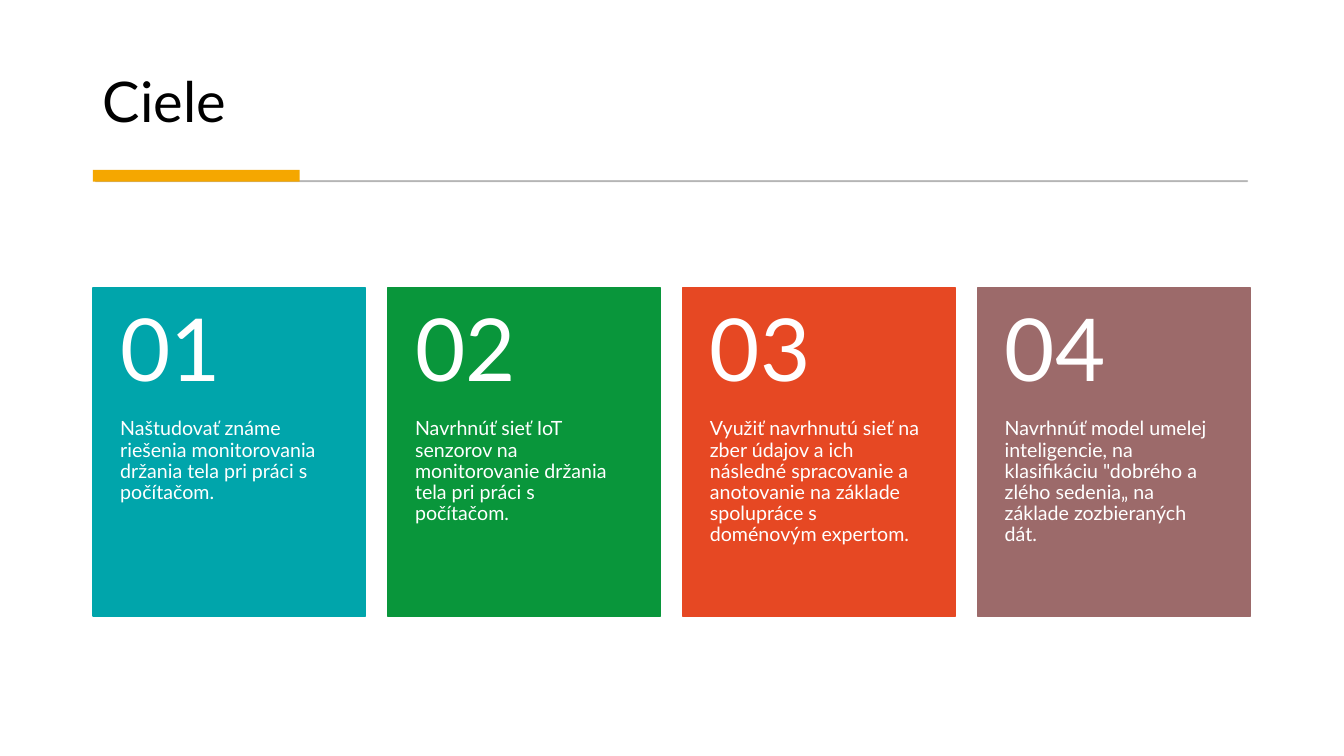
from lxml import etree
from pptx import Presentation
from pptx import util as u
from pptx.dml.color import RGBColor
from pptx.enum import shapes, text
from pptx.oxml.ns import qn

COLORS = {
    "ink": "000000",
    "white": "FFFFFF",
    "rule": "595959",
    "accent": "F5A700",
    "teal": "00A5AB",
    "green": "09963B",
    "orange": "E64823",
    "mauve": "9C6A6A",
}

GOALS = [
    ("teal", "Naštudovať známe riešenia monitorovania držania tela pri práci s počítačom."),
    ("green", "Navrhnúť sieť IoT senzorov na monitorovanie držania tela pri práci s počítačom."),
    ("orange", "Využiť navrhnutú sieť na zber údajov a ich následné spracovanie "
               "a anotovanie na základe spolupráce s doménovým expertom."),
    ("mauve", "Navrhnúť model umelej inteligencie, na klasifikáciu \"dobrého a zlého sedenia„ "
              "na základe zozbieraných dát."),
]

CARD_LEFT, CARD_TOP, CARD_PITCH = 2.34, 7.26, 7.43
CARD_WIDTH, NUMBER_HEIGHT, GOAL_HEIGHT = 6.88, 3.3, 4.96


class GoalSlide:
    """Holds the text style and the current slide, and draws its elements."""

    font = "Lato"

    def __init__(self, page):
        self.page = page

    def color(self, name):
        return RGBColor.from_string(COLORS[name])

    def place(self, shape, left, top, width, height):
        shape.left, shape.top = u.Cm(left), u.Cm(top)
        shape.width, shape.height = u.Cm(width), u.Cm(height)

    def add_words(self, frame, words, size, color):
        frame.word_wrap = True
        frame.auto_size = text.MSO_AUTO_SIZE.NONE
        para = frame.paragraphs[0]
        para.alignment = text.PP_ALIGN.LEFT
        para.line_spacing = 0.9
        span = para.add_run()
        span.text = words
        span.font.name = self.font
        span.font.size = u.Pt(size)
        span.font.color.rgb = self.color(color)

    def title(self, words, *area):
        box = self.page.shapes.title
        self.place(box, *area)
        box.text_frame.vertical_anchor = text.MSO_ANCHOR.BOTTOM
        self.add_words(box.text_frame, words, 40, "ink")

    def bar(self, owner, color, area, line_width=0, opacity=100):
        shape = owner.add_shape(shapes.MSO_SHAPE.RECTANGLE, *map(u.Cm, area))
        shape.shadow.inherit = False
        shape.fill.solid()
        shape.fill.fore_color.rgb = self.color(color)
        if line_width:
            shape.line.width = u.Pt(line_width)
            shape.line.color.rgb = self.color(color)
        else:
            shape.line.fill.background()
        if opacity < 100:
            for tint in shape._element.spPr.iter(qn("a:srgbClr")):
                etree.SubElement(tint, qn("a:alpha")).set("val", str(opacity * 1000))

    def label(self, owner, words, size, area, anchor, top_inset, bottom_inset):
        frame = owner.add_textbox(*map(u.Cm, area)).text_frame
        frame.margin_left = frame.margin_right = u.Cm(0.69)
        frame.margin_top, frame.margin_bottom = u.Cm(top_inset), u.Cm(bottom_inset)
        frame.vertical_anchor = anchor
        self.add_words(frame, words, size, "white")

    def card(self, index, color, goal):
        owner = self.page.shapes.add_group_shape().shapes
        left = CARD_LEFT + index * CARD_PITCH
        self.bar(owner, color, (left, CARD_TOP, CARD_WIDTH, NUMBER_HEIGHT + GOAL_HEIGHT), 1)
        self.label(owner, goal, 14, (left, CARD_TOP + NUMBER_HEIGHT, CARD_WIDTH, GOAL_HEIGHT),
                   text.MSO_ANCHOR.TOP, 0, 0.91)
        self.label(owner, f"{index + 1:02}", 62, (left, CARD_TOP, CARD_WIDTH, NUMBER_HEIGHT),
                   text.MSO_ANCHOR.MIDDLE, 0.46, 0.46)


def main():
    deck = Presentation()
    deck.slide_width, deck.slide_height = u.Cm(33.87), u.Cm(19.05)
    page = deck.slides.add_slide(deck.slide_layouts[5])
    slide = GoalSlide(page)
    slide.title("Ciele", CARD_LEFT, 0.71, 29.18, 2.82)
    slide.bar(page.shapes, "rule", (2.41, 4.55, 29.03, 0.03), 0.75, 30)
    slide.bar(page.shapes, "accent", (CARD_LEFT, 4.28, 5.21, 0.3))
    for index, (color, goal) in enumerate(GOALS):
        slide.card(index, color, goal)
    deck.save("out.pptx")


if __name__ == "__main__":
    main()
